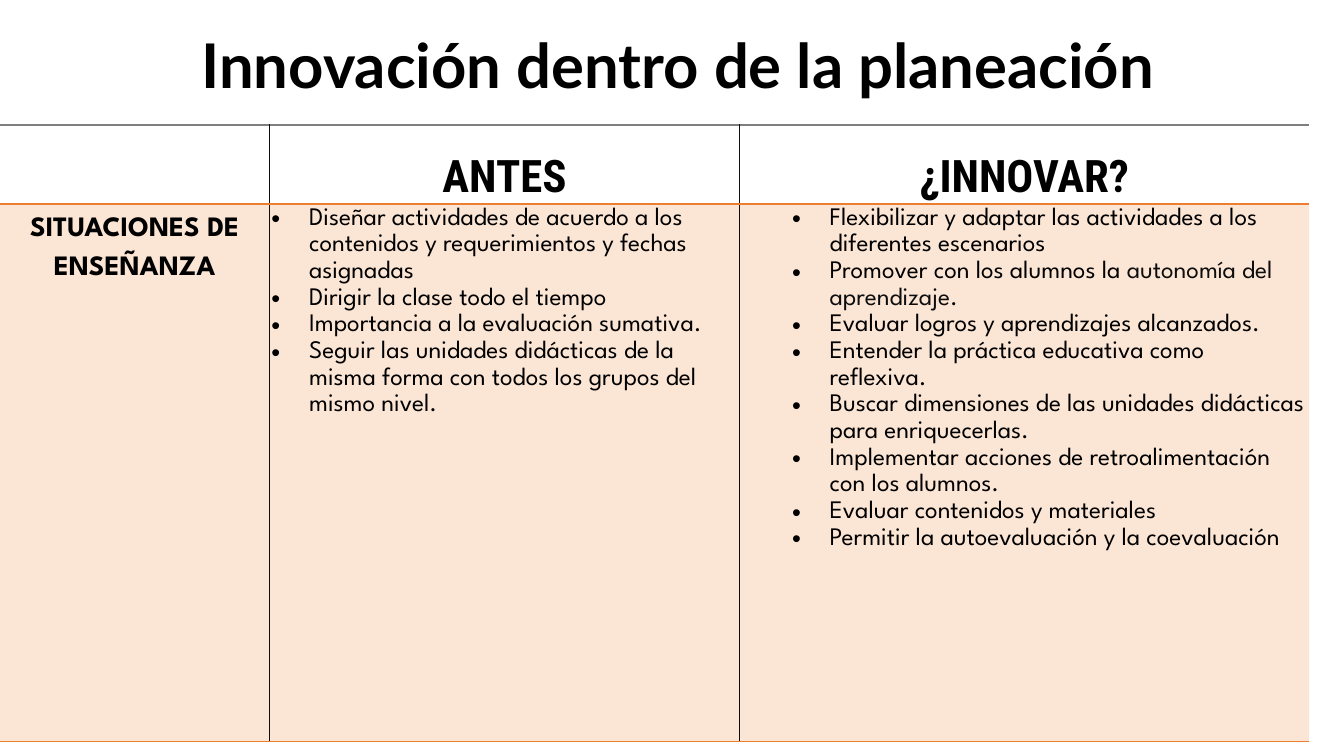
from dataclasses import dataclass

from lxml import etree
from pptx import Presentation
from pptx import util as u
from pptx.dml.color import RGBColor
from pptx.enum import text
from pptx.oxml import ns


@dataclass(frozen=True)
class Theme:
    ink: str = "000000"
    soft_ink: str = "0D0D0D"
    accent: str = "ED7D31"
    top_rule: str = "7F7F7F"
    tint_percent: int = 20
    title_font: str = "Lato"
    heading_font: str = "Roboto Condensed"
    body_font: str = "League Spartan"
    title_size: int = 44
    heading_size: int = 32
    label_size: int = 20
    body_size: int = 18


THEME = Theme()
NO_STYLE = "{2D5ABB26-0587-4C30-8999-92F81FD0307C}"
HANGING = u.Cm(0.95)
COLUMN_WIDTHS = (6.79, 11.85, 14.35)
ROW_HEIGHTS = (1.99, 13.54)

HEADINGS = ("", "ANTES", "¿INNOVAR?")
TOPIC = "SITUACIONES DE ENSEÑANZA"
BEFORE = (
    "Diseñar actividades de acuerdo a los contenidos y requerimientos y fechas asignadas",
    "Dirigir la clase todo el tiempo",
    "Importancia a la evaluación sumativa.",
    "Seguir las unidades didácticas de la misma forma con todos los grupos del mismo nivel.",
)
# Text between bars takes the softer ink.
INNOVATE = (
    "Flexibilizar y adaptar las actividades a los diferentes escenarios",
    "Promover con los alumnos la |autonomía del aprendizaje|.",
    "Evaluar logros y aprendizajes alcanzados.",
    "Entender la práctica educativa como reflexiva.",
    "Buscar dimensiones de las unidades didácticas para enriquecerlas.",
    "Implementar acciones de retroalimentación con los alumnos.",
    "Evaluar contenidos y materiales",
    "Permitir la autoevaluación y la coevaluación",
)


def style_font(font, name, size, bold=False, color=THEME.ink):
    font.name = name
    font.size = u.Pt(size)
    font.bold = bold
    font.color.rgb = RGBColor.from_string(color)


def add_title(slide, wording):
    title = slide.shapes.title
    title.left, title.top = u.Cm(2.49), u.Cm(0.48)
    title.width, title.height = u.Cm(29.21), u.Cm(2.24)
    frame = title.text_frame
    frame.text = wording
    frame.vertical_anchor = text.MSO_ANCHOR.MIDDLE
    heading = frame.paragraphs[0]
    heading.alignment = text.PP_ALIGN.CENTER
    style_font(heading.runs[0].font, THEME.title_font, THEME.title_size, True)


def write_label(cell, wording, font_name, size):
    cell.text_frame.text = wording
    label = cell.text_frame.paragraphs[0]
    label.alignment = text.PP_ALIGN.CENTER
    label.line_spacing = 1.5
    label.space_after = u.Pt(10)
    for run in label.runs:
        style_font(run.font, font_name, size, True)


def write_bullets(cell, items, indent, level=0):
    frame = cell.text_frame
    for index, item in enumerate(items):
        point = frame.add_paragraph() if index else frame.paragraphs[0]
        point.level = level
        point.line_spacing = 1.15
        props = point._p.get_or_add_pPr()
        props.set("marL", str(indent))
        props.set("indent", str(-HANGING))
        etree.SubElement(props, ns.qn("a:buFont"), typeface="Arial")
        etree.SubElement(props, ns.qn("a:buChar"), char="•")
        for part, wording in enumerate(item.split("|")):
            run = point.add_run()
            run.text = wording
            color = THEME.soft_ink if part % 2 else THEME.ink
            style_font(run.font, THEME.body_font, THEME.body_size, color=color)


def set_borders(cell, **colors):
    """Draw the sides named L, R, T and B; a side without a colour has no line."""
    props = cell._tc.get_or_add_tcPr()
    for side in "LRTB":
        line = etree.SubElement(props, ns.qn(f"a:ln{side}"), w=str(u.Pt(1)))
        color = colors.get(side)
        if color:
            fill = etree.SubElement(line, ns.qn("a:solidFill"))
            etree.SubElement(fill, ns.qn("a:srgbClr"), val=color)
        else:
            etree.SubElement(line, ns.qn("a:noFill"))


def tint(cell):
    cell.fill.solid()
    cell.fill.fore_color.rgb = RGBColor.from_string(THEME.accent)
    color = cell._tc.tcPr.find(f"{ns.qn('a:solidFill')}/{ns.qn('a:srgbClr')}")
    etree.SubElement(color, ns.qn("a:alpha"), val=str(THEME.tint_percent * 1000))


def format_cell(cell, row, column):
    cell.margin_left = cell.margin_right = u.Cm(0.05)
    cell.margin_top = cell.margin_bottom = 0
    last = len(COLUMN_WIDTHS) - 1
    set_borders(
        cell,
        L=THEME.soft_ink if column > 0 else None,
        R=THEME.soft_ink if column < last else None,
        T=THEME.accent if row else THEME.top_rule,
        B=THEME.accent,
    )
    if row:
        tint(cell)
    else:
        cell.fill.background()


def add_comparison(slide):
    frame = slide.shapes.add_table(
        len(ROW_HEIGHTS), len(COLUMN_WIDTHS), 0, u.Cm(3.15),
        u.Cm(sum(COLUMN_WIDTHS)), u.Cm(sum(ROW_HEIGHTS)))
    table = frame.table
    table._tbl.tblPr.find(ns.qn("a:tableStyleId")).text = NO_STYLE
    table.horz_banding = False
    for column, width in zip(table.columns, COLUMN_WIDTHS):
        column.width = u.Cm(width)
    for row, height in zip(table.rows, ROW_HEIGHTS):
        row.height = u.Cm(height)
    for row in range(len(ROW_HEIGHTS)):
        for column in range(len(COLUMN_WIDTHS)):
            format_cell(table.cell(row, column), row, column)
    for column, heading in enumerate(HEADINGS):
        write_label(table.cell(0, column), heading, THEME.heading_font, THEME.heading_size)
    write_label(table.cell(1, 0), TOPIC, THEME.body_font, THEME.label_size)
    write_bullets(table.cell(1, 1), BEFORE, HANGING)
    write_bullets(table.cell(1, 2), INNOVATE, HANGING + u.Cm(1.27), level=1)


def main():
    deck = Presentation()
    deck.slide_width, deck.slide_height = u.Cm(33.87), u.Cm(19.05)
    slide = deck.slides.add_slide(deck.slide_layouts.get_by_name("Title Only"))
    add_title(slide, "Innovación dentro de la planeación")
    add_comparison(slide)
    deck.save("out.pptx")


if __name__ == "__main__":
    main()
